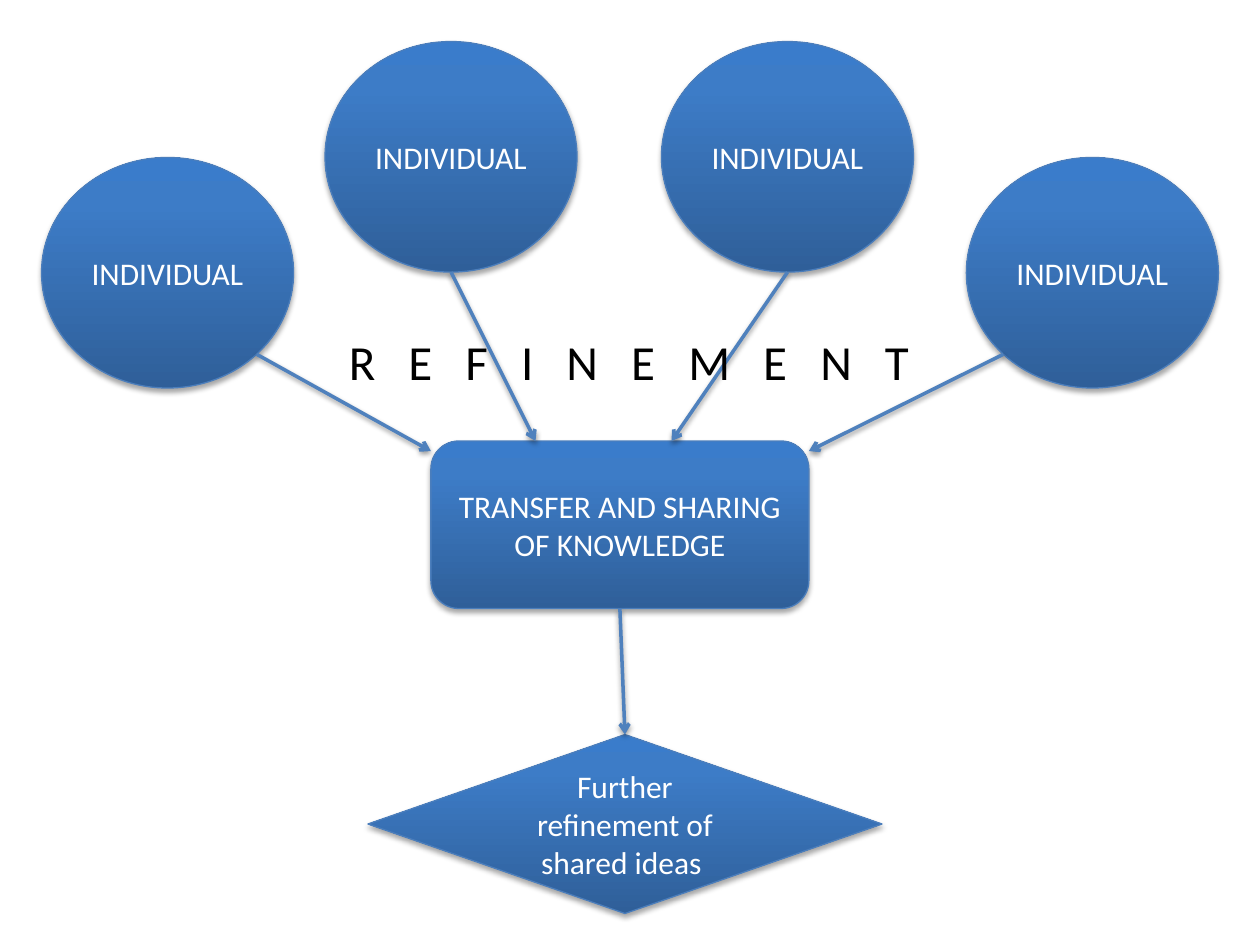
from math import cos, radians, sin

from lxml import etree
from pptx import Presentation
from pptx.dml.color import RGBColor
from pptx.enum.shapes import MSO_CONNECTOR, MSO_SHAPE
from pptx.enum.text import MSO_ANCHOR, PP_ALIGN
from pptx.oxml import parse_xml
from pptx.util import Inches, Pt

CIRCLE = MSO_SHAPE.FLOWCHART_CONNECTOR
PROCESS = MSO_SHAPE.FLOWCHART_ALTERNATE_PROCESS
DECISION = MSO_SHAPE.FLOWCHART_DECISION
STRAIGHT = MSO_CONNECTOR.STRAIGHT
CENTER, MIDDLE = PP_ALIGN.CENTER, MSO_ANCHOR.MIDDLE

FONT = "Calibri"
WHITE = RGBColor(0xFF, 0xFF, 0xFF)
BLACK = RGBColor(0, 0, 0)
OUTLINE = RGBColor(0x4B, 0x7E, 0xBC)
ARROW = RGBColor(0x4F, 0x81, 0xBD)
GRADIENT = [(0, RGBColor(0x2F, 0x5F, 0x99)), (80, RGBColor(0x3D, 0x7C, 0xC7)),
            (100, RGBColor(0x3A, 0x7C, 0xCB))]
NS = "http://schemas.openxmlformats.org/drawingml/2006/main"

# Content: each individual has left, top, angle where its arrow leaves, arrow end
CIRCLE_W, CIRCLE_H = 2, 1.83
BOX = (3.42, 3.5, 3, 1.33)
DIAMOND = (2.92, 5.83, 4.08, 1.42)
BOX_LEFT, BOX_TOP, BOX_RIGHT = BOX[0], BOX[1], BOX[0] + BOX[2]
CORNER_Y = BOX_TOP + 0.08
INDIVIDUALS = [
    (0.33, 1.25, 45, (BOX_LEFT, CORNER_Y)),
    (2.58, 0.33, 90, (4.25, BOX_TOP)),
    (5.25, 0.33, 90, (5.33, BOX_TOP)),
    (7.67, 1.25, 135, (BOX_RIGHT, CORNER_Y)),
]

deck = Presentation()
deck.slide_width, deck.slide_height = Inches(10), Inches(7.5)
page = deck.slides.add_slide(deck.slide_layouts[6])


def add_shadow(item, opacity, distance):
    item._element.spPr.append(parse_xml(
        f'<a:effectLst xmlns:a="{NS}"><a:outerShdw blurRad="{Pt(3.1)}" dist="{Pt(distance)}" '
        f'dir="5400000" rotWithShape="0"><a:srgbClr val="000000">'
        f'<a:alpha val="{opacity * 1000}"/></a:srgbClr></a:outerShdw></a:effectLst>'))


def style_span(span, size, color):
    span.font.name, span.font.size = FONT, Pt(size)
    span.font.color.rgb = color


def add_node(kind, place, label):
    shape = page.shapes.add_shape(kind, *map(Inches, place))
    shape.line.color.rgb, shape.line.width = OUTLINE, Pt(0.75)
    stops = "".join(f'<a:gs pos="{pos * 1000}"><a:srgbClr val="{color}"/></a:gs>'
                    for pos, color in GRADIENT)
    # The fill follows the position and the geometry
    shape._element.spPr.insert(2, parse_xml(
        f'<a:gradFill xmlns:a="{NS}" rotWithShape="1"><a:gsLst>{stops}</a:gsLst>'
        f'<a:lin ang="16200000" scaled="0"/></a:gradFill>'))
    add_shadow(shape, 35, 1.8)
    frame = shape.text_frame
    frame.text, frame.word_wrap, frame.vertical_anchor = label, True, MIDDLE
    para = frame.paragraphs[0]
    para.alignment = CENTER
    style_span(para.runs[0], 18, WHITE)
    return shape


def add_arrow(start, end):
    arrow = page.shapes.add_connector(STRAIGHT, *map(Inches, (*start, *end)))
    arrow.line.color.rgb, arrow.line.width = ARROW, Pt(2)
    etree.SubElement(arrow.line._get_or_add_ln(), f"{{{NS}}}tailEnd", type="arrow")
    add_shadow(arrow, 38, 1.6)
    return arrow


# Individuals and the shared box
for left, top, _, _ in INDIVIDUALS:
    add_node(CIRCLE, (left, top, CIRCLE_W, CIRCLE_H), "INDIVIDUAL")
box = add_node(PROCESS, BOX, "TRANSFER AND SHARING OF KNOWLEDGE")

# Arrows from the rim of each circle to the box
for left, top, angle, end in INDIVIDUALS:
    rim = (left + CIRCLE_W / 2 * (1 + cos(radians(angle))),
           top + CIRCLE_H / 2 * (1 + sin(radians(angle))))
    add_arrow(rim, end)

# Outcome
diamond = add_node(DECISION, DIAMOND, "Further refinement of shared ideas ")
outcome = add_arrow((4.92, 4.83), (4.96, 5.83))
outcome.begin_connect(box, 2)
outcome.end_connect(diamond, 0)

# Letter-spaced caption
caption = page.shapes.add_textbox(*map(Inches, (2.33, 2.58, 5.33, 0.57)))
caption.text_frame.word_wrap = True
para = caption.text_frame.paragraphs[0]
para.text = "R E F I N E M E N T"
para._p.get_or_add_pPr().set("marL", str(Inches(0.34)))
style_span(para.runs[0], 28, BLACK)
para.runs[0].font._element.set("spc", "633")

deck.save("out.pptx")
